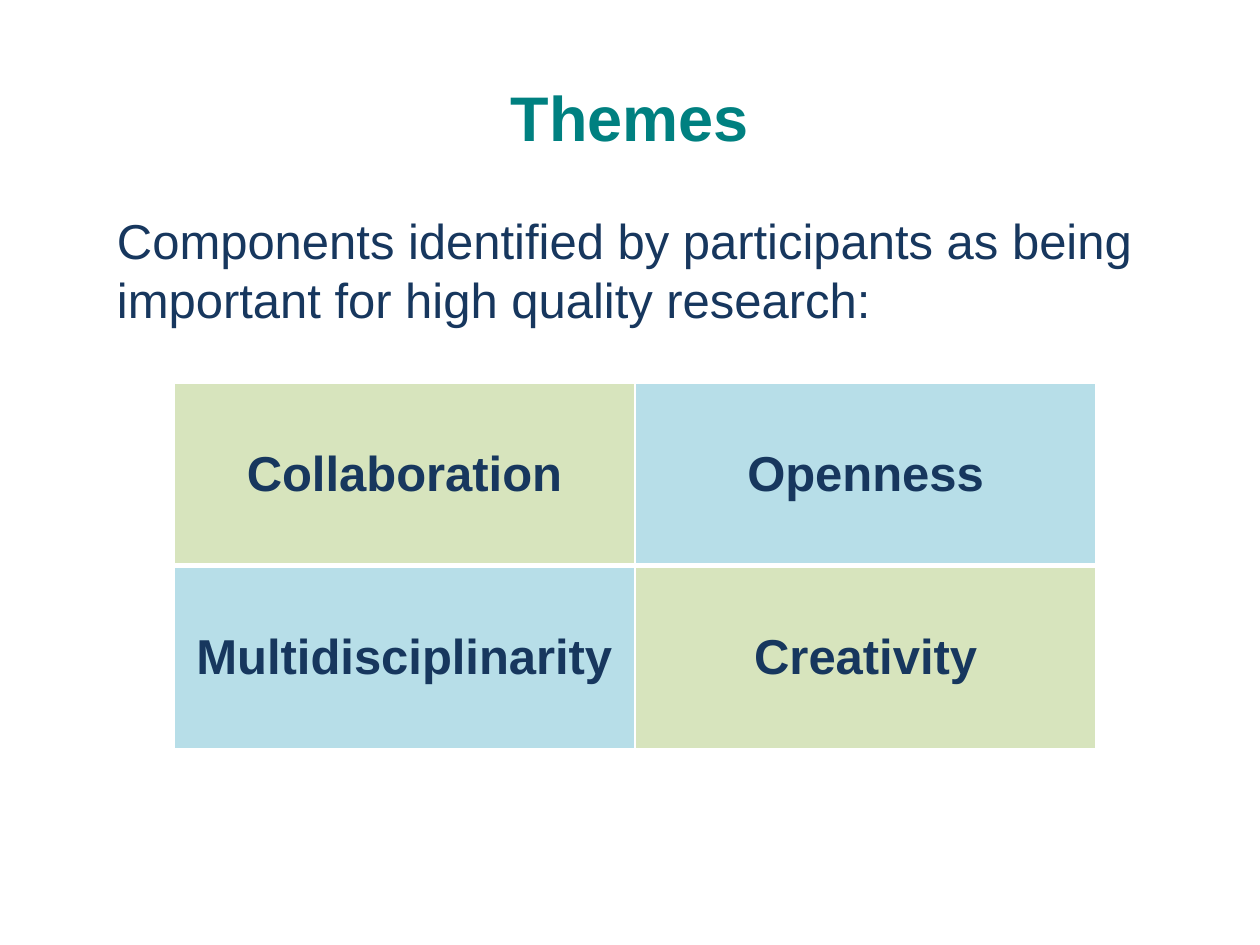
from pptx import Presentation
from pptx.dml.color import RGBColor
from pptx.enum.text import MSO_ANCHOR as Anchor, PP_ALIGN as Align
from pptx.oxml import parse_xml
from pptx.oxml.ns import nsdecls
from pptx.util import Inches, Pt

TEAL = RGBColor(0x00, 0x80, 0x80)
NAVY = RGBColor(0x17, 0x37, 0x5E)
GREEN = RGBColor(0xD7, 0xE4, 0xBD)
BLUE = RGBColor(0xB7, 0xDE, 0xE8)
WHITE = RGBColor(0xFF, 0xFF, 0xFF)


def write(frame, text, size=28, color=NAVY, bold=False, align=Align.LEFT):
    para = frame.paragraphs[0]
    para.text = text
    para.alignment = align
    font = para.font
    font.name, font.size, font.bold = "Arial", Pt(size), bold
    font.color.rgb = color


def edge(cell, side, width):
    cell._tc.get_or_add_tcPr().append(parse_xml(
        f'<a:ln{side} {nsdecls("a")} w="{Pt(width)}"><a:solidFill>'
        f'<a:srgbClr val="{WHITE}"/></a:solidFill></a:ln{side}>'))


class Deck:
    """Holds the style and the current slide."""

    def __init__(self):
        self.show = Presentation()
        self.show.slide_width, self.show.slide_height = Inches(10), Inches(7.5)
        self.slide = self.show.slides.add_slide(self.show.slide_layouts[6])

    def text(self, box, text, anchor=Anchor.TOP, **style):
        frame = self.slide.shapes.add_textbox(*map(Inches, box)).text_frame
        frame.word_wrap = True
        frame.vertical_anchor = anchor
        write(frame, text, **style)

    def table(self, box, rows, fills, rule):
        shape = self.slide.shapes.add_table(len(rows), len(rows[0]), *map(Inches, box))
        grid = shape.table
        for r, row in enumerate(rows):
            for c, label in enumerate(row):
                cell = grid.cell(r, c)
                for side in "LRTB":
                    inner = (r, side) in ((0, "B"), (1, "T"))
                    edge(cell, side, rule if inner else 1)
                cell.fill.solid()
                cell.fill.fore_color.rgb = fills[(r + c) % len(fills)]
                cell.vertical_anchor = Anchor.MIDDLE
                write(cell.text_frame, label, bold=True, align=Align.CENTER)


def main():
    deck = Deck()
    deck.text((0.5, 0.3, 9, 1.25), "Themes", anchor=Anchor.MIDDLE,
              size=36, color=TEAL, bold=True, align=Align.CENTER)
    deck.text((0.83, 1.62, 8.59, 1.1),
              "Components identified by participants as being "
              "important for high quality research:")
    deck.table((1.38, 3.04, 7.32, 2.9),
               [["Collaboration", "Openness"], ["Multidisciplinarity", "Creativity"]],
               (GREEN, BLUE), rule=3)
    deck.show.save("out.pptx")


if __name__ == "__main__":
    main()
